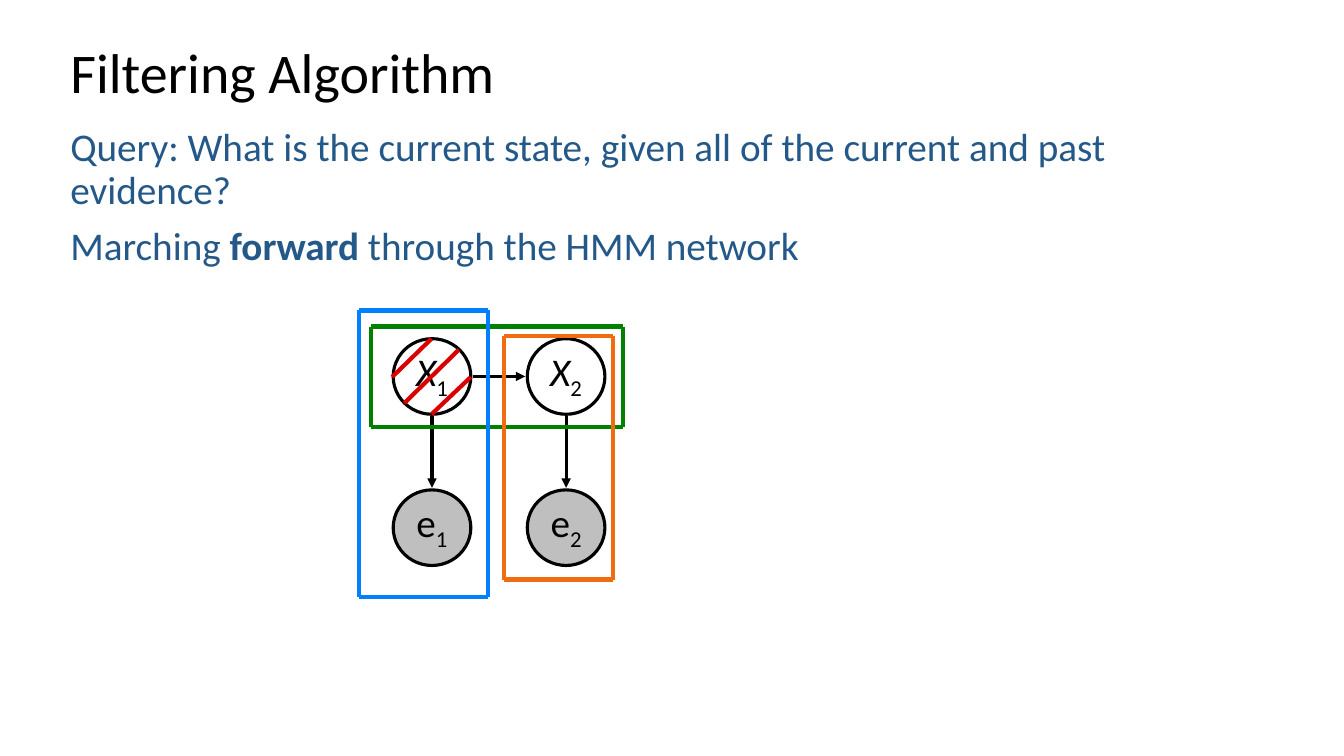
from lxml.etree import SubElement
from pptx import Presentation
from pptx.dml.color import RGBColor
from pptx.enum.shapes import MSO_CONNECTOR, MSO_SHAPE
from pptx.enum.text import MSO_ANCHOR, PP_ALIGN
from pptx.oxml.ns import qn
from pptx.util import Inches, Pt

COLORS = {
    "black": "000000", "white": "FFFFFF", "gray": "BFBFBF", "text": "235888",
    "red": "DB0000", "green": "008000", "orange": "F16C11", "blue": "0080FF",
}
NODE_W, NODE_H = 0.77, 0.75
COLUMNS = {"1": 3.9, "2": 5.23}
STATE_Y, EVIDENCE_Y = 3.36, 4.86
GAP = 0.02


def rgb(name):
    return RGBColor.from_string(COLORS[name])


class SlideBuilder:
    font = "Calibri"

    def __init__(self, slide):
        self.s = slide

    def style(self, r, size, color, bold=False, italic=False):
        r.font.name = self.font
        r.font.size = Pt(size)
        r.font.color.rgb = rgb(color)
        r.font.bold = bold
        r.font.italic = italic

    def text(self, x, y, w, h, paragraphs, size, color, anchor=MSO_ANCHOR.TOP, before=0):
        """Add a text box; each paragraph is a list of (text, bold) runs."""
        tf = self.s.shapes.add_textbox(Inches(x), Inches(y), Inches(w), Inches(h)).text_frame
        tf.word_wrap = True
        tf.vertical_anchor = anchor
        for i, runs in enumerate(paragraphs):
            p = tf.add_paragraph() if i else tf.paragraphs[0]
            p.line_spacing = 0.9
            p.space_before = Pt(before)
            for text, bold in runs:
                r = p.add_run()
                r.text = text
                self.style(r, size, color, bold)

    def node(self, x, y, letter, index, fill, italic=False):
        sp = self.s.shapes.add_shape(
            MSO_SHAPE.OVAL, Inches(x), Inches(y), Inches(NODE_W), Inches(NODE_H))
        sp.shadow.inherit = False
        sp.fill.solid()
        sp.fill.fore_color.rgb = rgb(fill)
        sp.line.color.rgb = rgb("black")
        sp.line.width = Pt(2.25)
        tf = sp.text_frame
        tf.word_wrap = False
        tf.vertical_anchor = MSO_ANCHOR.MIDDLE
        tf.margin_left = tf.margin_right = Inches(0.1)
        tf.margin_top, tf.margin_bottom = 0, Inches(0.05)
        p = tf.paragraphs[0]
        p.alignment = PP_ALIGN.CENTER
        for text, slanted in ((letter, italic), (index, False)):
            r = p.add_run()
            r.text = text
            self.style(r, 28, "black", italic=slanted)
        r._r.get_or_add_rPr().set("baseline", "-25000")

    def line(self, start, end, color, width=3, arrow=False):
        c = self.s.shapes.add_connector(
            MSO_CONNECTOR.STRAIGHT, *(Inches(v) for v in (*start, *end)))
        c.line.color.rgb = rgb(color)
        c.line.width = Pt(width)
        if arrow:
            SubElement(c.line._get_or_add_ln(), qn("a:tailEnd"), type="triangle")
        SubElement(c._element.spPr, qn("a:effectLst"))

    def arrow(self, start, end):
        self.line(start, end, "black", 2.25, arrow=True)

    def frame(self, left, top, right, bottom, color):
        """Outline a factor of the network with four separate lines."""
        for y in (top, bottom):
            self.line((left, y), (right, y), color)
        for x in (left, right):
            self.line((x, top), (x, bottom), color)


def main():
    prs = Presentation()
    prs.slide_width, prs.slide_height = Inches(13.33), Inches(7.5)
    b = SlideBuilder(prs.slides.add_slide(prs.slide_layouts[6]))

    b.text(0.6, 0.4, 11.5, 0.69, [[("Filtering Algorithm", False)]], 40, "black",
           MSO_ANCHOR.MIDDLE)

    for index, x in COLUMNS.items():
        center = x + NODE_W / 2
        b.node(x, STATE_Y, "X", index, "white", italic=True)
        b.node(x, EVIDENCE_Y, "e", index, "gray")
        b.arrow((center, STATE_Y + NODE_H + GAP), (center, EVIDENCE_Y - GAP))
    middle = STATE_Y + NODE_H / 2
    b.arrow((COLUMNS["1"] + NODE_W + GAP, middle), (COLUMNS["2"] - GAP, middle))

    strikes = [((3.89, 3.74), (4.28, 3.36)), ((4.01, 4), (4.55, 3.47)),
               ((4.28, 4.11), (4.67, 3.74))]
    for start, end in strikes:
        b.line(start, end, "red")

    b.frame(3.68, 3.24, 6.18, 4.24, "green")
    b.frame(5, 3.33, 6.08, 5.75, "orange")
    b.frame(3.56, 3.08, 4.84, 5.92, "blue")

    b.text(0.6, 1.22, 11.5, 2.23, [
        [("Query: What is the current state, given all of the current and past evidence?", False)],
        [("Marching ", False), ("forward", True), (" through the HMM network", False)],
    ], 28, "text", before=10)

    prs.save("out.pptx")


if __name__ == "__main__":
    main()
